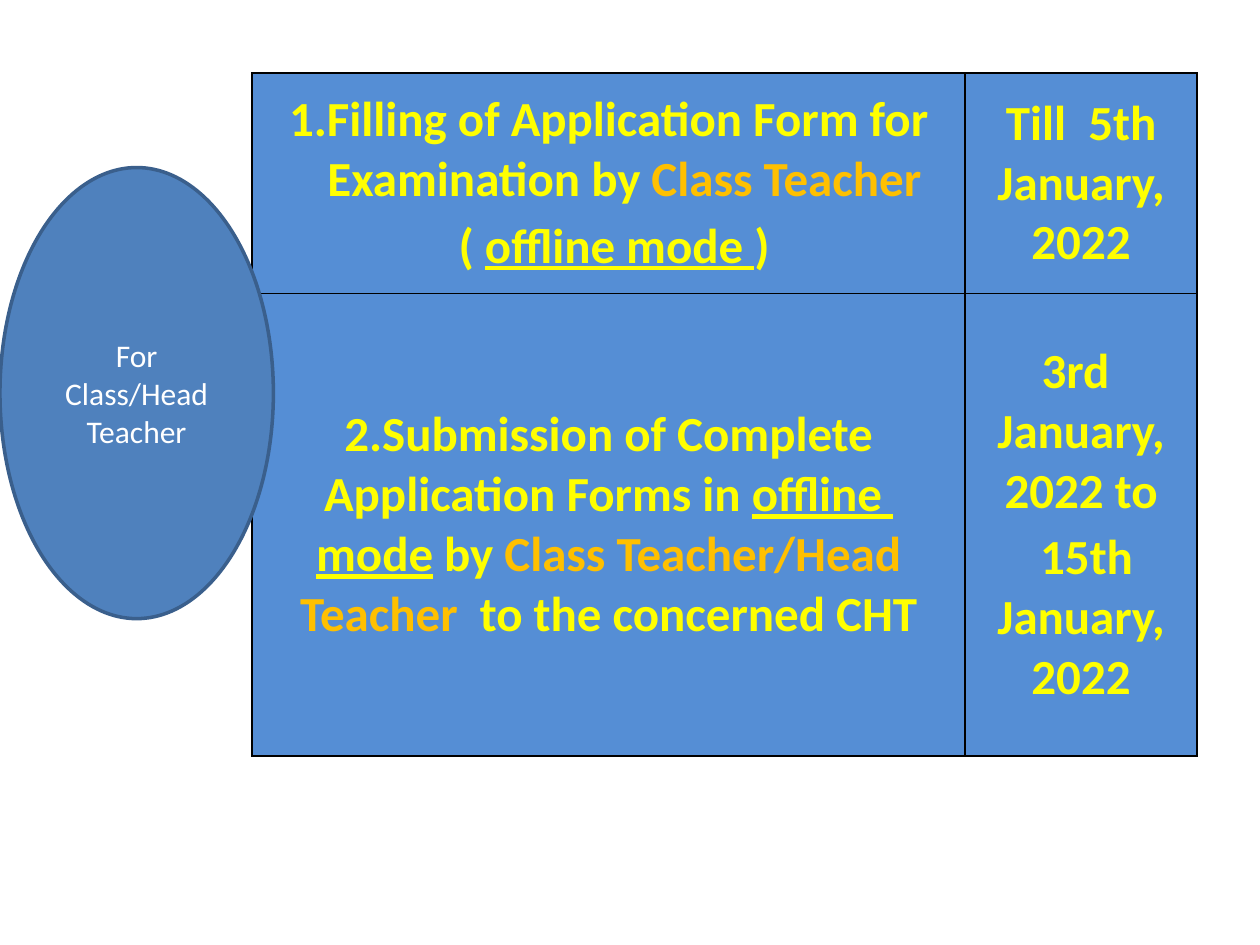
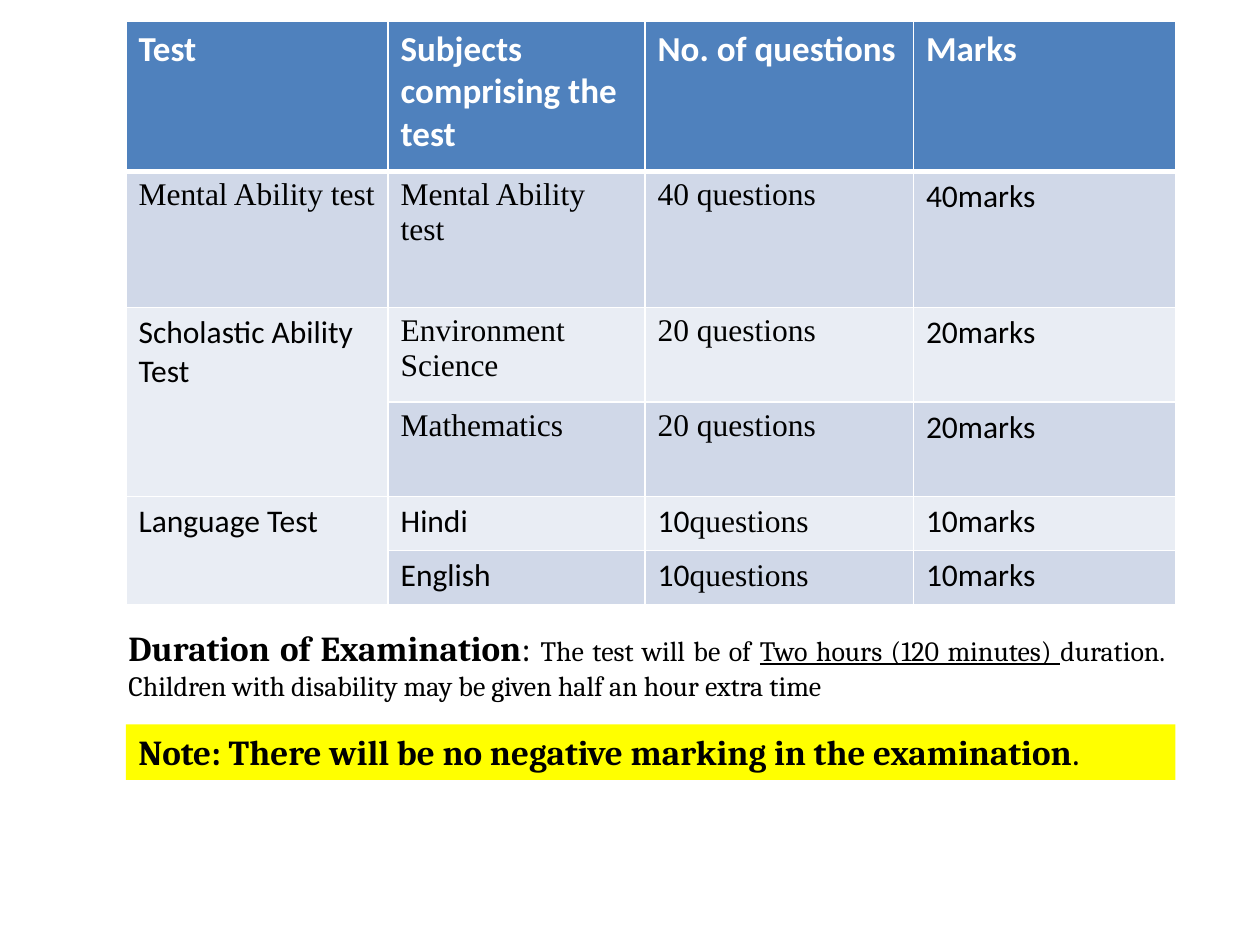
from lxml.etree import SubElement
from pptx import Presentation
from pptx.dml.color import RGBColor
from pptx.enum.shapes import MSO_SHAPE as Shape
from pptx.enum.text import MSO_ANCHOR as Anchor, PP_ALIGN as Align
from pptx.oxml.ns import qn
from pptx.util import Pt

PX = 9144  # 100 px to the inch
BLACK, WHITE, YELLOW, ORANGE = "000000", "FFFFFF", "FFFF00", "FFC000"
BLUE, DARK_BLUE, SKY = "4F81BD", "3A5F8C", "558ED5"
BAND_DARK, BAND_LIGHT = "D0D8E8", "E9EDF4"
BODY, SERIF, TIMES = "Calibri", "Cambria", "Times New Roman"
color_of = RGBColor.from_string


def add_span(para, text, size=18, font=BODY, color=BLACK, bold=False, underline=False):
    span = para.add_run()
    span.text = text
    span.font.size = Pt(size)
    span.font.name = font
    span.font.color.rgb = color_of(color)
    span.font.bold = bold
    span.font.underline = underline


def style_cell(cell, fill, line, top=1, bottom=1):
    props = cell._tc.get_or_add_tcPr()
    for side, width in (("L", 1), ("R", 1), ("T", top), ("B", bottom)):
        border = SubElement(props, qn(f"a:ln{side}"), w=str(Pt(width)))
        solid = SubElement(border, qn("a:solidFill"))
        SubElement(solid, qn("a:srgbClr"), val=line)
    cell.fill.solid()
    cell.fill.fore_color.rgb = color_of(fill)


deck = Presentation()
deck.slide_width, deck.slide_height = 1000 * PX, 750 * PX
blank = deck.slide_layouts[6]

# Slide 1: schedule table, each cell a list of paragraphs made of (text, format)
page = deck.slides.add_slide(blank)
accent, underlined = {"color": ORANGE}, {"underline": True}
schedule = [
    [
        [[("Filling of Application Form for Examination by ", {}), ("Class Teacher", accent)],
         [(" ( ", {}), ("offline mode ", underlined), (")", {})]],
        [[("Till  5th January, 2022", {})]],
    ],
    [
        [[("2.Submission of Complete Application Forms in ", {}), ("offline  mode", underlined),
          (" by ", {}), ("Class Teacher/Head Teacher  ", accent), ("to the concerned CHT", {})]],
        [[("3rd  January, 2022 to", {})], [(" 15th January, 2022", {})]],
    ],
]
table = page.shapes.add_table(2, 2, 200 * PX, 58 * PX, 750 * PX, 542 * PX).table
table.first_row = table.horz_banding = False
for column, width in zip(table.columns, (566, 184)):
    column.width = width * PX
for row, height in zip(table.rows, (175, 367)):
    row.height = height * PX
for r, cells in enumerate(schedule):
    for c, paragraphs in enumerate(cells):
        cell = table.cell(r, c)
        style_cell(cell, SKY, BLACK)
        cell.vertical_anchor = Anchor.MIDDLE
        cell.margin_left = cell.margin_right = 7 * PX
        cell.margin_top = cell.margin_bottom = 0
        for i, spans in enumerate(paragraphs):
            para = cell.text_frame.paragraphs[0] if i == 0 else cell.text_frame.add_paragraph()
            para.alignment = Align.CENTER
            para.space_before = para.space_after = Pt(1.8)
            for text, look in spans:
                add_span(para, text, **{"size": 28, "color": YELLOW, "bold": True, **look})

# Hanging indent in the first cell, numbered on its first paragraph
for i, para in enumerate(table.cell(0, 0).text_frame.paragraphs):
    props = para._p.get_or_add_pPr()
    props.set("marL", str(25 * PX))
    props.set("indent", str(-25 * PX))
    if i == 0:
        SubElement(props, qn("a:buFont"), typeface="+mj-lt")
        SubElement(props, qn("a:buAutoNum"), type="arabicPeriod")

# Audience ellipse
audience = page.shapes.add_shape(Shape.OVAL, 0, 133 * PX, 217 * PX, 358 * PX)
audience.shadow.inherit = False
audience.fill.solid()
audience.fill.fore_color.rgb = color_of(BLUE)
audience.line.color.rgb = color_of(DARK_BLUE)
audience.line.width = Pt(2)
audience.text_frame.word_wrap = True
audience.text_frame.vertical_anchor = Anchor.MIDDLE
para = audience.text_frame.paragraphs[0]
para.alignment = Align.CENTER
add_span(para, "For Class/Head Teacher", color=WHITE)

# Slide 2: test pattern table, each cell a list of (text, font)
page = deck.slides.add_slide(blank)
headings = ["Test", "Subjects comprising the test", "No. of questions", "Marks"]
tests = [
    [[("Mental Ability test", TIMES)], [("Mental Ability test", TIMES)],
     [("40 questions", TIMES)], [("40marks", BODY)]],
    [[("Scholastic Ability Test", BODY)], [("Environment Science", TIMES)],
     [("20 questions", TIMES)], [("20marks", BODY)]],
    [[], [("Mathematics", TIMES)], [("20 questions", TIMES)], [("20marks", BODY)]],
    [[("Language Test", BODY)], [("Hindi", BODY)],
     [("10", BODY), ("questions", TIMES)], [("10marks", BODY)]],
    [[], [("English", BODY)], [("10", BODY), ("questions", TIMES)], [("10marks", BODY)]],
]
table = page.shapes.add_table(6, 4, 100 * PX, 17 * PX, 833 * PX, 463 * PX).table
for column, width in zip(table.columns, (208, 204, 213, 208)):
    column.width = width * PX
for row, height in zip(table.rows, (119, 108, 75, 75, 43, 43)):
    row.height = height * PX
for c, heading in enumerate(headings):
    cell = table.cell(0, c)
    style_cell(cell, BLUE, WHITE, bottom=3)
    add_span(cell.text_frame.paragraphs[0], heading, size=20, color=WHITE, bold=True)
for r, cells in enumerate(tests, start=1):
    for c, spans in enumerate(cells):
        cell = table.cell(r, c)
        dark = r % 2 == 1 and spans
        style_cell(cell, BAND_DARK if dark else BAND_LIGHT, WHITE, top=3 if r == 1 else 1)
        for text, font in spans:
            add_span(cell.text_frame.paragraphs[0], text, font=font)
for first in (2, 4):
    table.cell(first, 0).merge(table.cell(first + 1, 0))

# Duration paragraph and highlighted note
duration = page.shapes.add_textbox(92 * PX, 492 * PX, 842 * PX, 98 * PX)
note = page.shapes.add_shape(Shape.RECTANGLE, 100 * PX, 575 * PX, 833 * PX, 44 * PX)
note.shadow.inherit = False
note.fill.solid()
note.fill.fore_color.rgb = color_of(YELLOW)
note.line.fill.background()
lead, small = {"size": 20, "bold": True}, {"size": 16}
statements = [
    (duration, [("Duration of Examination", lead), (": ", {"size": 20}),
                ("The test will be of ", small),
                ("Two hours (120 minutes) ", {"size": 16, "underline": True}),
                ("duration. Children with disability may be given half an hour extra time", small)]),
    (note, [("Note: There will be no negative marking in the examination", lead),
            (".", {"size": 20})]),
]
for box, spans in statements:
    box.text_frame.word_wrap = True
    box.text_frame.vertical_anchor = Anchor.TOP
    para = box.text_frame.paragraphs[0]
    para.alignment = Align.JUSTIFY
    for text, look in spans:
        add_span(para, text, font=SERIF, **look)

deck.save("out.pptx")
